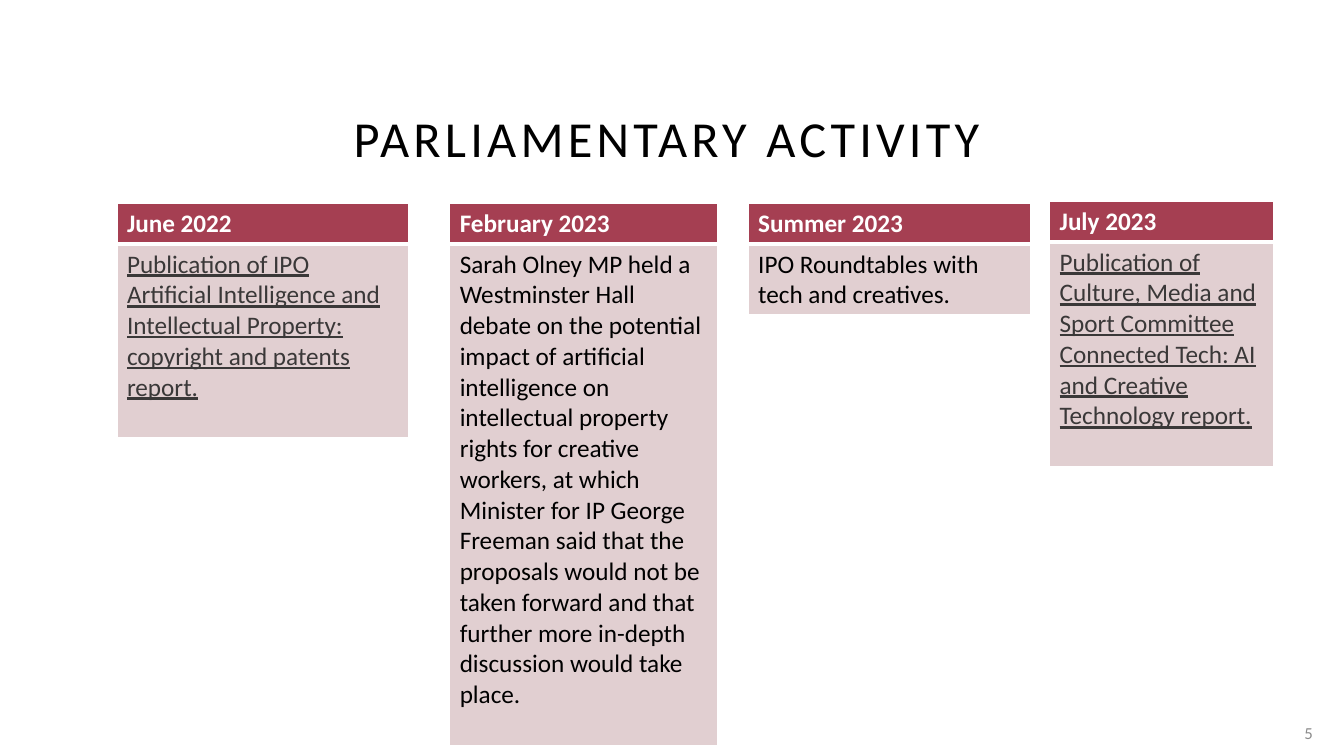
import lxml.etree
import pptx
import pptx.dml.color
import pptx.enum.text
import pptx.oxml.ns
import pptx.util

PX = 9144  # EMU per px, 100 px to the inch
RGB = pptx.dml.color.RGBColor
WHITE = RGB(0xFF, 0xFF, 0xFF)
BLACK = RGB(0x00, 0x00, 0x00)
GREY = RGB(0x8C, 0x8C, 0x8C)
LINK = RGB(0x3A, 0x38, 0x38)
CRIMSON = RGB(0xA5, 0x3F, 0x52)
PINK = RGB(0xE1, 0xCF, 0xD1)
ALIGN = pptx.enum.text.PP_ALIGN
ANCHOR = pptx.enum.text.MSO_ANCHOR
HEADER_HEIGHT = 40


def write(frame, text, size, color, align=ALIGN.LEFT, **formats):
    para = frame.paragraphs[0]
    para.alignment = align
    span = para.add_run()
    span.text = text
    span.font.color.rgb = color
    formats.update(name="Calibri", size=pptx.util.Pt(size))
    for name, value in formats.items():
        setattr(span.font, name, value)
    return span


def add_borders(cell, widths):
    properties = cell._tc.get_or_add_tcPr()
    for side, width in widths.items():
        line = lxml.etree.SubElement(properties, pptx.oxml.ns.qn("a:ln" + side), w=str(pptx.util.Pt(width)))
        fill = lxml.etree.SubElement(line, pptx.oxml.ns.qn("a:solidFill"))
        lxml.etree.SubElement(fill, pptx.oxml.ns.qn("a:srgbClr"), val=str(WHITE))


deck = pptx.Presentation()
deck.slide_width = 1333 * PX
deck.slide_height = 750 * PX
page = deck.slides.add_slide(deck.slide_layouts[5])

# Title
title = page.shapes.title
for name, value in dict(left=222, top=70, width=879, height=101).items():
    setattr(title, name, value * PX)
title.text_frame.auto_size = pptx.enum.text.MSO_AUTO_SIZE.NONE
title.text_frame.vertical_anchor = ANCHOR.BOTTOM
heading = write(title.text_frame, "PARLIAMENTARY ACTIVITY", 36, BLACK, ALIGN.CENTER)
heading.font._element.set("spc", "300")

# Page number
number = page.shapes.add_textbox(1263 * PX, 707 * PX, 49 * PX, 40 * PX)
number.text_frame.word_wrap = True
number.text_frame.vertical_anchor = ANCHOR.MIDDLE
write(number.text_frame, "5", 12, GREY, ALIGN.RIGHT)

# One table per event: left, top, width, body height, date, text, is a report
events = [
    (116, 202, 289, 192, "June 2022",
     "Publication of IPO Artificial Intelligence and Intellectual Property: "
     "copyright and patents report.", True),
    (446, 202, 266, 498, "February 2023",
     "Sarah Olney MP held a Westminster Hall debate on the potential impact of "
     "artificial intelligence on intellectual property rights for creative workers, "
     "at which Minister for IP George Freeman said that the proposals would not be "
     "taken forward and that further more in-depth discussion would take place.", False),
    (742, 202, 280, 70, "Summer 2023", "IPO Roundtables with tech and creatives.", False),
    (1041, 200, 222, 223, "July 2023",
     "Publication of Culture, Media and Sport Committee Connected Tech: "
     "AI and Creative Technology report.", True),
]
for left, top, width, body_height, date, text, is_report in events:
    frame = page.shapes.add_table(2, 1, left * PX, top * PX, width * PX,
                                  (HEADER_HEIGHT + body_height) * PX)
    table = frame.table
    table.rows[0].height = HEADER_HEIGHT * PX
    table.rows[1].height = body_height * PX
    header, body = table.cell(0, 0), table.cell(1, 0)
    add_borders(header, dict(L=1, R=1, T=1, B=3))
    add_borders(body, dict(L=1, R=1, T=3, B=1))
    for cell, color in ((header, CRIMSON), (body, PINK)):
        cell.fill.solid()
        cell.fill.fore_color.rgb = color
    write(header.text_frame, date, 18, WHITE, bold=True)
    write(body.text_frame, text, 18, LINK if is_report else BLACK,
          bold=False, underline=is_report)

deck.save("out.pptx")
